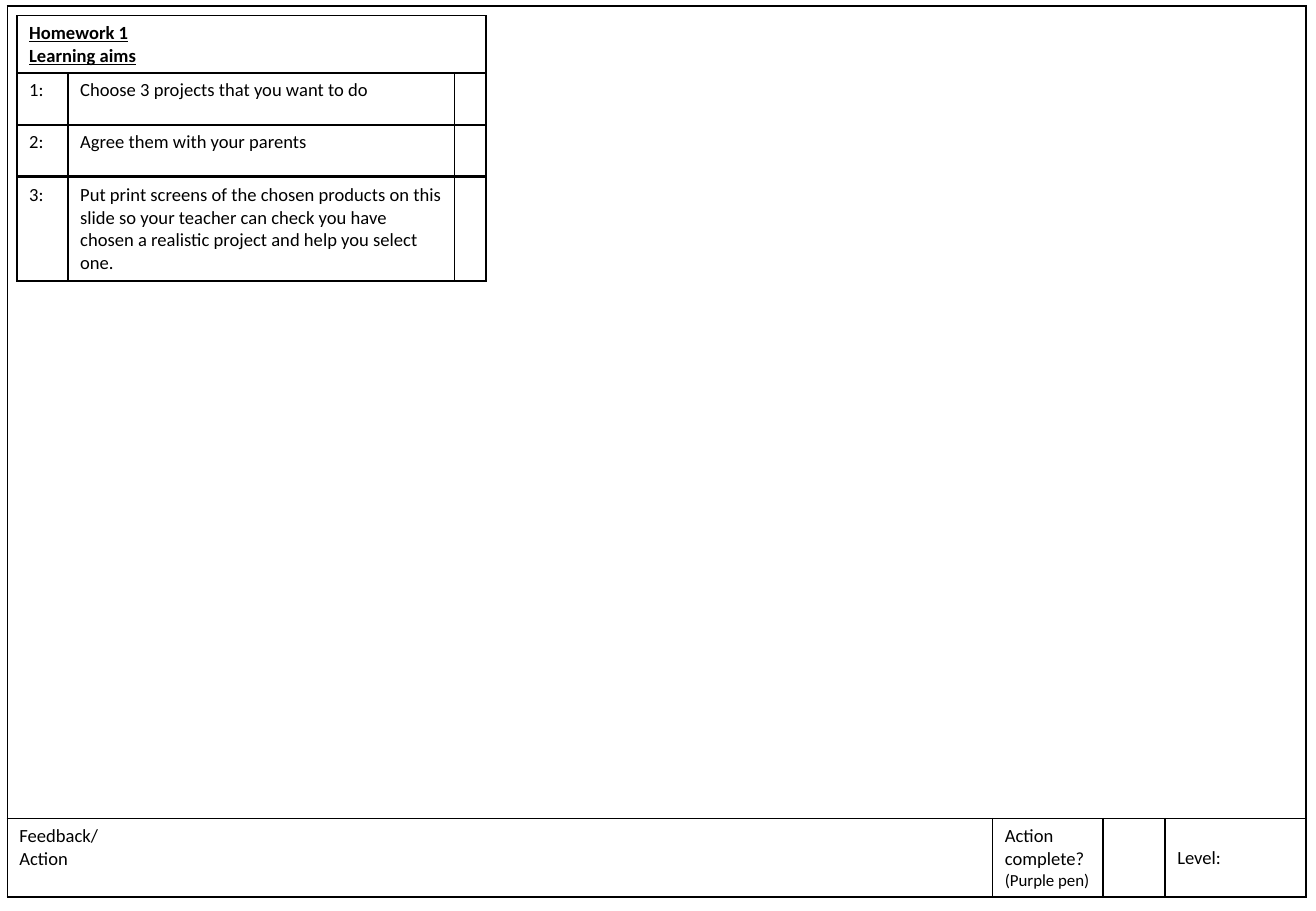
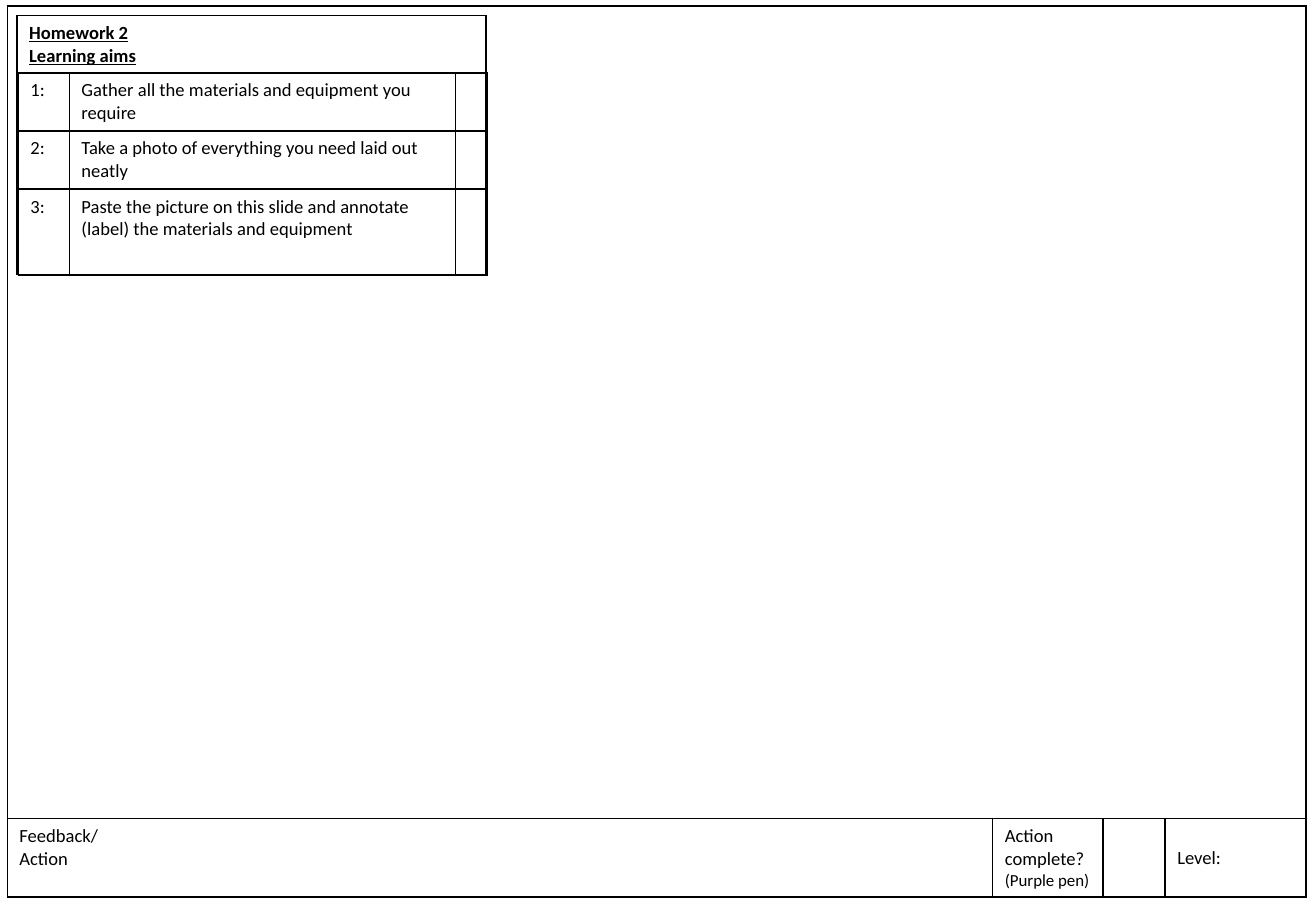
"""Build two homework slides with learning aims and a shared feedback frame."""
from dataclasses import dataclass

from lxml import etree
from pptx import Presentation
from pptx.dml.color import RGBColor
from pptx.enum.text import MSO_ANCHOR
from pptx.oxml.ns import qn
from pptx.util import Inches, Pt

TOP, MIDDLE = MSO_ANCHOR.TOP, MSO_ANCHOR.MIDDLE
COLORS = {"ink": "000000", "paper": "FFFFFF"}
WIDTH, HEIGHT = Inches(10.83), Inches(7.5)
BORDER = Pt(1)
BORDER_SIDES = ("a:lnL", "a:lnR", "a:lnT", "a:lnB")
PLAIN_TABLE = {"first_row": False, "horz_banding": False}
BODY = {"name": "Calibri", "size": Pt(11)}
HEADING = BODY | {"bold": True, "underline": True}
SMALL = BODY | {"size": Pt(10)}
AIM_COLUMNS = (3.88, 29.36, 2.4)


@dataclass(frozen=True)
class Line:
    """One paragraph and its font format."""
    text: str
    style: dict


@dataclass(frozen=True)
class Entry:
    """Content of one table cell."""
    lines: tuple[Line, ...] = ()
    anchor: MSO_ANCHOR = TOP
    fill: str | None = None


@dataclass(frozen=True)
class Grid:
    """A table whose lengths are percentages of the slide's size."""
    left: float
    top: float
    columns: tuple[float, ...]
    rows: tuple[float, ...]
    entries: tuple[tuple[Entry, ...], ...]


@dataclass(frozen=True)
class Homework:
    """One homework slide."""
    title: str
    heading_height: float
    aims_left: float
    aim_heights: tuple[float, ...]
    aims: tuple[str, ...]


BLANK = Entry()
FRAME = Grid(0.55, 0.67, (74.88, 8.4, 4.71, 10.71), (89.2, 8.53), (
    (BLANK,) * 4,
    (
        Entry((Line("Feedback/", BODY), Line("Action", BODY))),
        Entry((Line("Action complete?", BODY), Line("(Purple pen)", SMALL)), MIDDLE),
        BLANK,
        Entry((Line("Level:", BODY),), MIDDLE),
    ),
))
HOMEWORKS = (
    Homework("Homework 1", 17.6, 1.29, (5.73, 5.73, 9.47), (
        "Choose 3 projects that you want to do",
        "Agree them with your parents",
        "Put print screens of the chosen products on this slide so your teacher "
        "can check you have chosen a realistic project and help you select one.",
    )),
    Homework("Homework 2", 28.4, 1.39, (5.73, 6.4, 9.47), (
        "Gather all the materials and equipment you require",
        "Take a photo of everything you need laid out neatly",
        "Paste the picture on this slide and annotate (label) the materials and equipment",
    )),
)


def across(percent: float) -> int:
    """Convert a share of the slide's width to a length."""
    return round(WIDTH * percent / 100)


def down(percent: float) -> int:
    """Convert a share of the slide's height to a length."""
    return round(HEIGHT * percent / 100)


def add_borders(cell) -> None:
    """Rule all four sides of a cell."""
    properties = cell._tc.get_or_add_tcPr()
    for position, side in enumerate(BORDER_SIDES):
        border = etree.Element(qn(side), w=str(BORDER))
        solid = etree.SubElement(border, qn("a:solidFill"))
        etree.SubElement(solid, qn("a:srgbClr"), val=COLORS["ink"])
        properties.insert(position, border)


def fill_cell(cell, entry: Entry) -> None:
    """Write and format one cell."""
    cell.vertical_anchor = entry.anchor
    if entry.fill:
        cell.fill.solid()
        cell.fill.fore_color.rgb = RGBColor.from_string(COLORS[entry.fill])
    else:
        cell.fill.background()
    add_borders(cell)
    frame = cell.text_frame
    for number, line in enumerate(entry.lines):
        paragraph = frame.add_paragraph() if number else frame.paragraphs[0]
        run = paragraph.add_run()
        run.text = line.text
        for attribute, value in line.style.items():
            setattr(run.font, attribute, value)
        run.font.color.rgb = RGBColor.from_string(COLORS["ink"])


def add_grid(slide, grid: Grid):
    """Draw a ruled table and return it."""
    table = slide.shapes.add_table(
        len(grid.rows), len(grid.columns), across(grid.left), down(grid.top),
        across(sum(grid.columns)), down(sum(grid.rows)),
    ).table
    for attribute, value in PLAIN_TABLE.items():
        setattr(table, attribute, value)
    for column, width in zip(table.columns, grid.columns):
        column.width = across(width)
    for row, height, entries in zip(table.rows, grid.rows, grid.entries):
        row.height = down(height)
        for cell, entry in zip(row.cells, entries):
            fill_cell(cell, entry)
    return table


def add_homework(deck, homework: Homework) -> None:
    """Add a slide with the feedback frame, heading and aims."""
    slide = deck.slides.add_slide(deck.slide_layouts[6])
    feedback = add_grid(slide, FRAME)
    feedback.cell(0, 0).merge(feedback.cell(0, len(FRAME.columns) - 1))
    heading = Entry(
        (Line(homework.title, HEADING), Line("Learning aims", HEADING)), fill="paper"
    )
    add_grid(slide, Grid(1.29, 1.73, (sum(AIM_COLUMNS),),
                         (homework.heading_height,), ((heading,),)))
    aims = tuple(
        (Entry((Line(f"{number}:", BODY),)), Entry((Line(aim, BODY),)), BLANK)
        for number, aim in enumerate(homework.aims, 1)
    )
    add_grid(slide, Grid(homework.aims_left, 8, AIM_COLUMNS, homework.aim_heights, aims))


def main() -> None:
    """Build and save the presentation."""
    deck = Presentation()
    deck.slide_width, deck.slide_height = WIDTH, HEIGHT
    for homework in HOMEWORKS:
        add_homework(deck, homework)
    deck.save("out.pptx")


if __name__ == "__main__":
    main()
